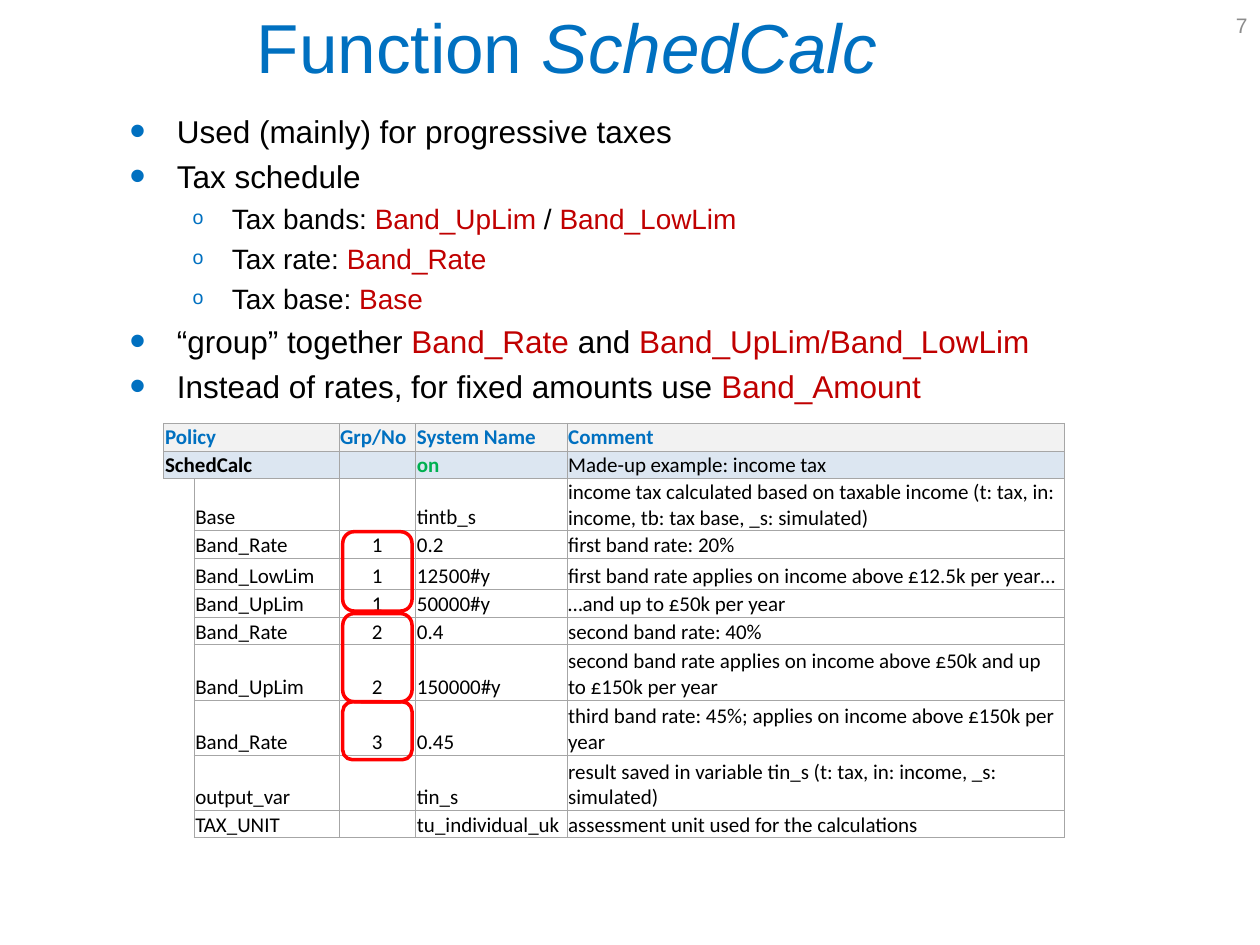
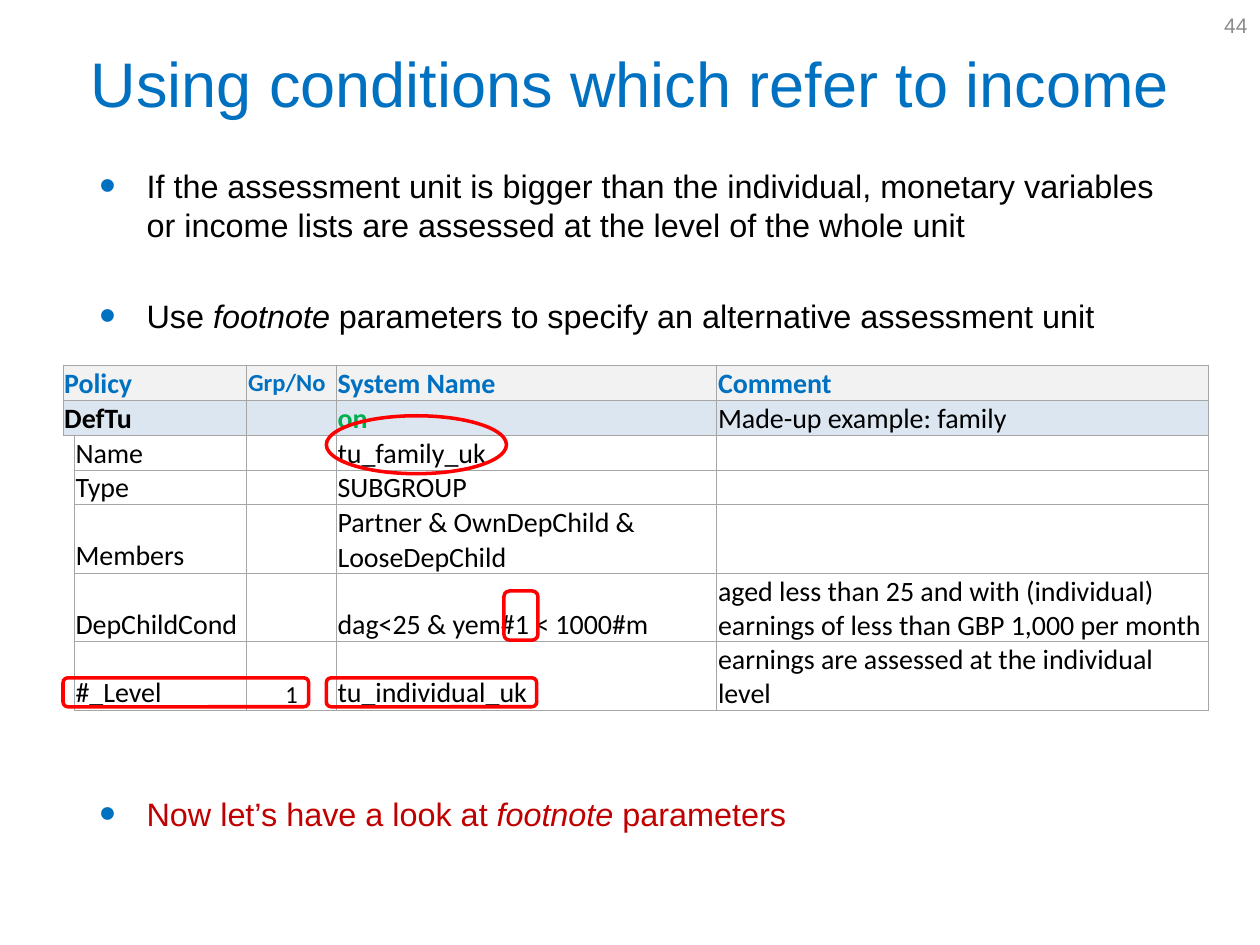
import pptx
import pptx.util
import pptx.dml.color
import pptx.enum.shapes
import pptx.enum.text
import pptx.oxml.ns
from lxml import etree

RGB = pptx.dml.color.RGBColor
Pt = pptx.util.Pt
SHAPE = pptx.enum.shapes.MSO_SHAPE
ALIGN = pptx.enum.text.PP_ALIGN
ANCHOR = pptx.enum.text.MSO_ANCHOR
qn = pptx.oxml.ns.qn

BLUE = RGB(0x00, 0x70, 0xC0)
DARK_RED = RGB(0xC0, 0x00, 0x00)
RED = RGB(0xFF, 0x00, 0x00)
GREEN = RGB(0x00, 0xB0, 0x50)
BLACK = RGB(0x00, 0x00, 0x00)
WHITE = RGB(0xFF, 0xFF, 0xFF)
PAGE_GREY = RGB(0x8C, 0x8C, 0x8C)
BORDER_GREY = RGB(0xA6, 0xA6, 0xA6)
HEADER_FILL = RGB(0xF2, 0xF2, 0xF2)
FUNCTION_FILL = RGB(0xDC, 0xE6, 0xF1)

TEXT_FONT, TABLE_FONT = "Arial", "Calibri"
CELL = pptx.util.Inches(0.1)  # side of one grid cell
COLS, ROWS = 100, 75          # the slide is 100 by 75 cells

# Per bullet level: character, size in percent, left margin, hanging indent
BULLETS = [("•", 145, 3.75, 3.75), ("o", 70, 8.13, 3.13)]
SPACE_BEFORE = 0.23  # share of the text size


def grid(*cells):
    return [round(n * CELL) for n in cells]


def add_run(p, text, size, color, font=TEXT_FONT, bold=False, italic=False):
    r = p.add_run()
    r.text = text
    r.font.size = Pt(size)
    r.font.name = font
    r.font.bold = bold
    r.font.italic = italic
    r.font.color.rgb = color


def red(text, italic=False):
    return text, DARK_RED, italic


def italic(text):
    return text, BLACK, True


def add_box(slide, at, anchor=ANCHOR.TOP):
    tf = slide.shapes.add_textbox(*grid(*at)).text_frame
    tf.word_wrap = True
    tf.vertical_anchor = anchor
    return tf


def add_title(slide, at, size, *runs):
    p = add_box(slide, at, ANCHOR.MIDDLE).paragraphs[0]
    p.alignment = ALIGN.CENTER
    for text, slanted in runs:
        add_run(p, text, size, BLUE, italic=slanted)


def add_page_number(slide, number):
    p = add_box(slide, (76.7, 0, 23.3, 4), ANCHOR.MIDDLE).paragraphs[0]
    p.alignment = ALIGN.RIGHT
    add_run(p, str(number), 12, PAGE_GREY)


def set_bullet(p, level):
    char, percent, margin, hang = BULLETS[level]
    pPr = p._p.get_or_add_pPr()
    left, indent = grid(margin, -hang)
    pPr.set("marL", str(left))
    pPr.set("indent", str(indent))
    if level:
        pPr.set("lvl", str(level))
    color = etree.SubElement(pPr, qn("a:buClr"))
    etree.SubElement(color, qn("a:srgbClr")).set("val", str(BLUE))
    etree.SubElement(pPr, qn("a:buSzPct")).set("val", str(percent * 1000))
    etree.SubElement(pPr, qn("a:buFont")).set("typeface", TEXT_FONT)
    etree.SubElement(pPr, qn("a:buChar")).set("char", char)


def add_bullets(slide, at, items):
    """Each item is level, size, space before (None for the usual), runs."""
    tf = add_box(slide, at)
    for i, (level, size, gap, runs) in enumerate(items):
        p = tf.add_paragraph() if i else tf.paragraphs[0]
        set_bullet(p, level)
        if i:
            p.space_before = Pt(gap or round(size * SPACE_BEFORE, 1))
        for run in runs:
            text, color, slanted = (run, BLACK, False) if isinstance(run, str) else run
            add_run(p, text, size, color, italic=slanted)


def set_borders(cell, sides):
    tcPr = cell._tc.get_or_add_tcPr()
    for side in "LRTB":
        ln = etree.SubElement(tcPr, qn("a:ln" + side))
        if side in sides:
            ln.set("w", str(Pt(0.5)))
            fill = etree.SubElement(ln, qn("a:solidFill"))
            etree.SubElement(fill, qn("a:srgbClr")).set("val", str(BORDER_GREY))
        else:
            etree.SubElement(ln, qn("a:noFill"))


def cell_style(row, col):
    """Fill, text colour and boldness by place in the table."""
    if row == 0:
        return HEADER_FILL, BLUE, True
    if row == 1:
        return FUNCTION_FILL, GREEN if col == 3 else BLACK, col < 4
    return WHITE, BLACK, False


def fill_cell(cell, row, col, text, size):
    fill, color, bold = cell_style(row, col)
    gutter = row > 1 and col == 0
    set_borders(cell, ("RT" if row == 2 else "R") if gutter else "LRTB")
    cell.fill.solid()
    cell.fill.fore_color.rgb = fill
    cell.margin_left = cell.margin_right = cell.margin_top = CELL // 10
    cell.margin_bottom = 0
    cell.vertical_anchor = ANCHOR.MIDDLE if row < 2 else ANCHOR.BOTTOM
    p = cell.text_frame.paragraphs[0]
    if row > 1 and col == 2:
        p.alignment = ALIGN.CENTER
    if text:
        add_run(p, text, size, color, TABLE_FONT, bold)
    else:
        etree.SubElement(p._p, qn("a:endParaRPr")).set("sz", str(size * 100))


def add_policy_table(slide, left, top, widths, heights, size, group_size, rows):
    """Rows hold policy, group, system value, comment; parameters are indented."""
    frame = slide.shapes.add_table(len(rows), len(widths),
                                   *grid(left, top, sum(widths), sum(heights)))
    table = frame.table
    table.first_row = table.horz_banding = False
    for column, width in zip(table.columns, grid(*widths)):
        column.width = width
    for row, height in zip(table.rows, grid(*heights)):
        row.height = height
    for i, (policy, *rest) in enumerate(rows):
        names = [policy, ""] if i < 2 else ["", policy]
        for j, text in enumerate(names + rest):
            fill_cell(table.cell(i, j), i, j, text, group_size if j == 2 else size)
        if i < 2:
            table.cell(i, 0).merge(table.cell(i, 1))


def add_highlight(slide, at, kind=SHAPE.ROUNDED_RECTANGLE):
    sp = slide.shapes.add_shape(kind, *grid(*at))
    sp.shadow.inherit = False
    sp.fill.background()
    sp.line.color.rgb = RED
    sp.line.width = Pt(2)


def build_schedcalc(slide):
    add_page_number(slide, 7)
    add_title(slide, (0, 2.1, 90, 3.1), 39.6, ("Function ", False), ("SchedCalc", True))
    add_bullets(slide, (9.3, 8.4, 90.7, 23.6), [
        (0, 18, None, ["Used (mainly) for progressive taxes"]),
        (0, 18, None, ["Tax schedule"]),
        (1, 16, None, ["Tax bands: ", red("Band_UpLim "), "/ ", red("Band_LowLim")]),
        (1, 16, None, ["Tax rate: ", red("Band_Rate")]),
        (1, 16, None, ["Tax base: ", red("Base")]),
        (0, 18, None, ["“group” together ", red("Band_Rate"), " and ",
                       red("Band_UpLim/Band_LowLim")]),
        (0, 18, None, ["Instead of rates, for fixed amounts use ", red("Band_Amount")]),
    ])
    line, double = 2.19, 4.38
    add_policy_table(
        slide, 13, 33.6, [2.4, 11.5, 6.1, 12, 39.5],
        [line, line, 4.13, line, 2.5, line, line, double, double, double, line], 12, 12, [
            ("Policy", "Grp/No", "System Name", "Comment"),
            ("SchedCalc", "", "on", "Made-up example: income tax"),
            ("Base", "", "tintb_s", "income tax calculated based on taxable income "
             "(t: tax, in: income, tb: tax base, _s: simulated)"),
            ("Band_Rate", "1", "0.2", "first band rate: 20%"),
            ("Band_LowLim", "1", "12500#y",
             "first band rate applies on income above £12.5k per year…"),
            ("Band_UpLim", "1", "50000#y", "…and up to £50k per year"),
            ("Band_Rate", "2", "0.4", "second band rate: 40%"),
            ("Band_UpLim", "2", "150000#y",
             "second band rate applies on income above £50k and up to £150k per year"),
            ("Band_Rate", "3", "0.45",
             "third band rate: 45%; applies on income above £150k per year"),
            ("output_var", "", "tin_s",
             "result saved in variable tin_s (t: tax, in: income, _s: simulated)"),
            ("TAX_UNIT", "", "tu_individual_uk",
             "assessment unit used for the calculations"),
        ])
    # One frame round each group of bands
    for top, height in [(42.2, 6.3), (48.7, 7), (55.7, 4.6)]:
        add_highlight(slide, (27.2, top, 5.5, height))


def build_conditions(slide):
    add_page_number(slide, 44)
    add_title(slide, (5, 2.6, 90, 7.8), 36, ("Using conditions which refer to income", False))
    # The last bullet stands below the table
    add_bullets(slide, (6.9, 12.7, 87.5, 52.9), [
        (0, 18.5, None, ["If the assessment unit is bigger than the individual, monetary "
                         "variables or income lists are assessed at the level of the "
                         "whole unit"]),
        (0, 18.5, 29.5, ["Use ", italic("footnote"),
                         " parameters to specify an alternative assessment unit"]),
        (0, 18.5, 262.5, [red("Now let’s have a look at "), red("footnote", True),
                          red(" parameters")]),
    ])
    line, double = 2.5, 5
    add_policy_table(
        slide, 5, 29, [0.9, 13.7, 7.1, 30.2, 39],
        [line] * 4 + [double, double, line], 16, 14, [
            ("Policy", "Grp/No", "System Name", "Comment"),
            ("DefTu", "", "on", "Made-up example: family"),
            ("Name", "", "tu_family_uk", ""),
            ("Type", "", "SUBGROUP", ""),
            ("Members", "", "Partner & OwnDepChild & LooseDepChild", ""),
            ("DepChildCond", "", "dag<25 & yem#1 < 1000#m",
             "aged less than 25 and with (individual) earnings of less than "
             "GBP 1,000 per month"),
            ("#_Level", "1", "tu_individual_uk",
             "earnings are assessed at the individual level"),
        ])
    # Unit name, footnote mark, and the footnote's two parts
    add_highlight(slide, (25.9, 33, 14.3, 4.6), SHAPE.OVAL)
    add_highlight(slide, (40, 46.9, 2.7, 3.9))
    for left, width in [(5, 19.5), (25.9, 16.7)]:
        add_highlight(slide, (left, 53.8, width, 2.3))


def main():
    prs = pptx.Presentation()
    prs.slide_width, prs.slide_height = grid(COLS, ROWS)
    for build in (build_schedcalc, build_conditions):
        build(prs.slides.add_slide(prs.slide_layouts[6]))
    prs.save("out.pptx")


if __name__ == "__main__":
    main()
